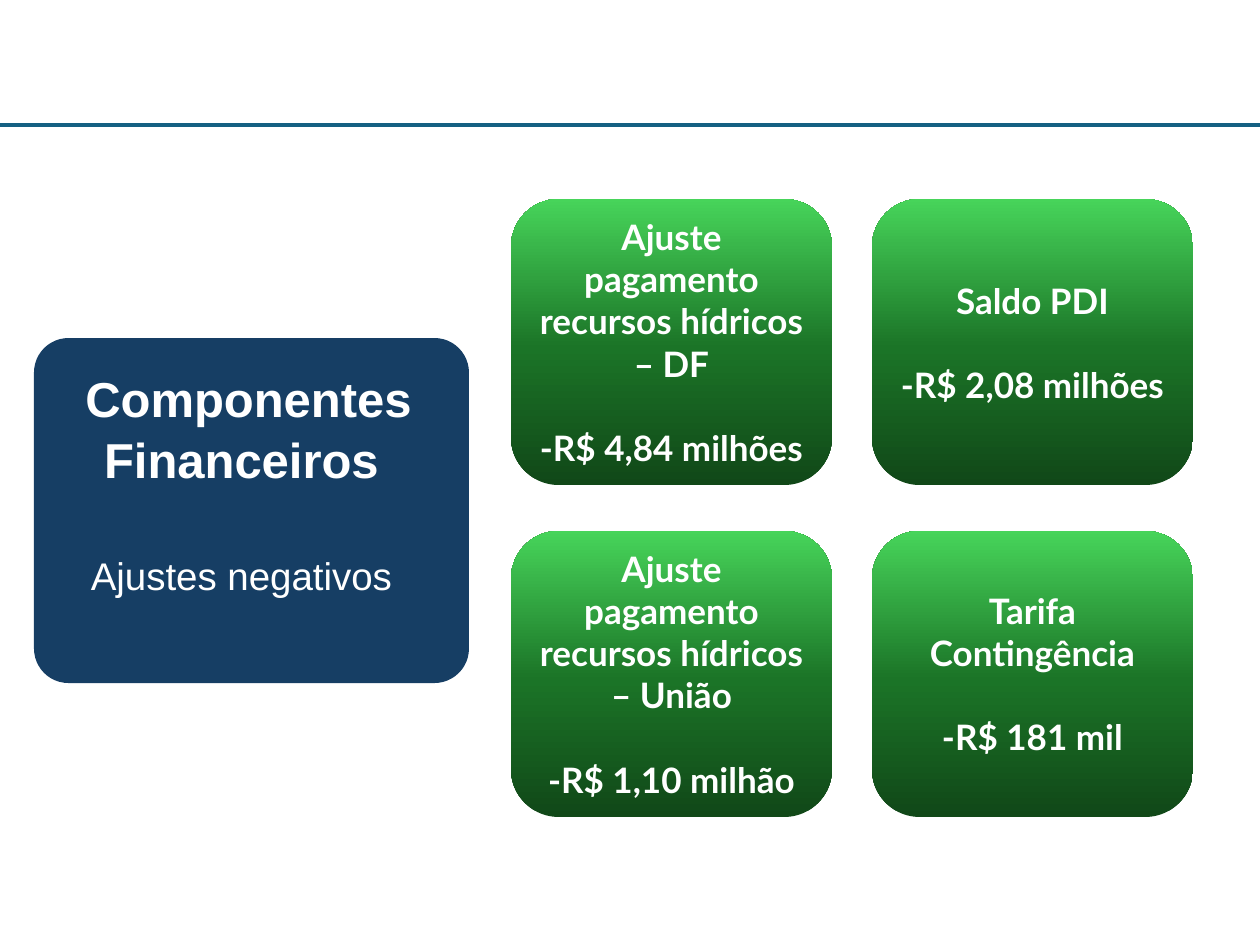
from dataclasses import dataclass

from copy import deepcopy
from lxml.etree import SubElement
from pptx import Presentation
from pptx.dml.color import RGBColor
from pptx.enum.shapes import MSO_CONNECTOR as Connector, MSO_SHAPE as Shape
from pptx.enum.text import MSO_ANCHOR as Anchor, PP_ALIGN as Align
from pptx.oxml.ns import qn
from pptx.util import Emu, Pt

PX_PER_INCH = 126
WHITE = RGBColor(0xFF, 0xFF, 0xFF)
NAVY = RGBColor(0x16, 0x3E, 0x64)
RULE_BLUE = RGBColor(0x15, 0x60, 0x82)
GREEN_STOPS = (
    (0, RGBColor(0x11, 0x48, 0x18)),
    (0.48, RGBColor(0x1B, 0x74, 0x27)),
    (1, RGBColor(0x47, 0xD4, 0x5A)),
)

# Card grid
GRID_LEFT, GRID_TOP = 511, 199
COLUMN_STEP, ROW_STEP = 361, 332
CARD_WIDTH, CARD_HEIGHT = 321, 286


@dataclass(frozen=True)
class Adjustment:
    column: int
    row: int
    label: str
    amount: str


ADJUSTMENTS = (
    Adjustment(0, 0, "Ajuste pagamento recursos hídricos – DF", "-R$ 4,84 milhões"),
    Adjustment(1, 0, "Saldo PDI", "-R$ 2,08 milhões"),
    Adjustment(0, 1, "Ajuste pagamento recursos hídricos – União", "-R$ 1,10 milhão"),
    Adjustment(1, 1, "Tarifa Contingência", "-R$ 181 mil"),
)


def px(length: int) -> Emu:
    return Emu(round(length * 914400 / PX_PER_INCH))


def add_round_box(slide, left: int, top: int, width: int, height: int):
    box = slide.shapes.add_shape(
        Shape.ROUNDED_RECTANGLE, px(left), px(top), px(width), px(height)
    )
    box.shadow.inherit = False
    box.line.fill.background()
    return box


def write_paragraph(paragraph, text: str, font_name: str, size: int, bold: bool) -> None:
    paragraph.text = text
    paragraph.alignment = Align.CENTER
    font = paragraph.font
    font.name, font.size, font.bold = font_name, Pt(size), bold
    font.color.rgb = WHITE


def fill_green(card) -> None:
    card.fill.gradient()
    card.fill.gradient_angle = 90
    stop_list = card._element.spPr.find(qn("a:gradFill")).find(qn("a:gsLst"))
    stop_list.insert(1, deepcopy(stop_list[0]))
    for stop, (position, color) in zip(card.fill.gradient_stops, GREEN_STOPS):
        stop.position = position
        stop.color.rgb = color


def add_card(slide, adjustment: Adjustment) -> None:
    card = add_round_box(
        slide,
        GRID_LEFT + adjustment.column * COLUMN_STEP,
        GRID_TOP + adjustment.row * ROW_STEP,
        CARD_WIDTH,
        CARD_HEIGHT,
    )
    fill_green(card)
    frame = card.text_frame
    frame.word_wrap = True
    frame.vertical_anchor = Anchor.MIDDLE
    write_paragraph(frame.paragraphs[0], adjustment.label, "Lato", 20, True)
    amount = frame.add_paragraph()
    write_paragraph(amount, adjustment.amount, "Lato", 20, True)
    amount.space_before = Pt(24)


def add_header_rule(slide) -> None:
    rule = slide.shapes.add_connector(
        Connector.STRAIGHT, px(0), px(125), px(1260), px(125)
    )
    rule.line.color.rgb = RULE_BLUE
    rule.line.width = Pt(2)
    SubElement(rule._element.spPr, qn("a:effectLst"))


def add_summary(slide) -> None:
    panel = add_round_box(slide, 34, 338, 435, 345)
    panel.adjustments[0] = 0.1
    panel.fill.solid()
    panel.fill.fore_color.rgb = NAVY

    frame = slide.shapes.add_textbox(px(34), px(359), px(415), px(304)).text_frame
    frame.word_wrap = True
    heading = frame.paragraphs[0]
    write_paragraph(heading, "Componentes Financeiros", "Arial", 28, True)
    heading.line_spacing = 1.05
    # First line sits slightly right of the second
    heading._p.get_or_add_pPr().set("indent", str(px(14)))
    subtitle = frame.add_paragraph()
    write_paragraph(subtitle, "Ajustes negativos", "Arial", 22, False)
    subtitle.line_spacing = 1.05
    subtitle.space_before = Pt(35)


def main() -> None:
    deck = Presentation()
    deck.slide_width, deck.slide_height = px(1260), px(945)
    slide = deck.slides.add_slide(deck.slide_layouts[6])
    add_header_rule(slide)
    for adjustment in ADJUSTMENTS:
        add_card(slide, adjustment)
    add_summary(slide)
    deck.save("out.pptx")


if __name__ == "__main__":
    main()
